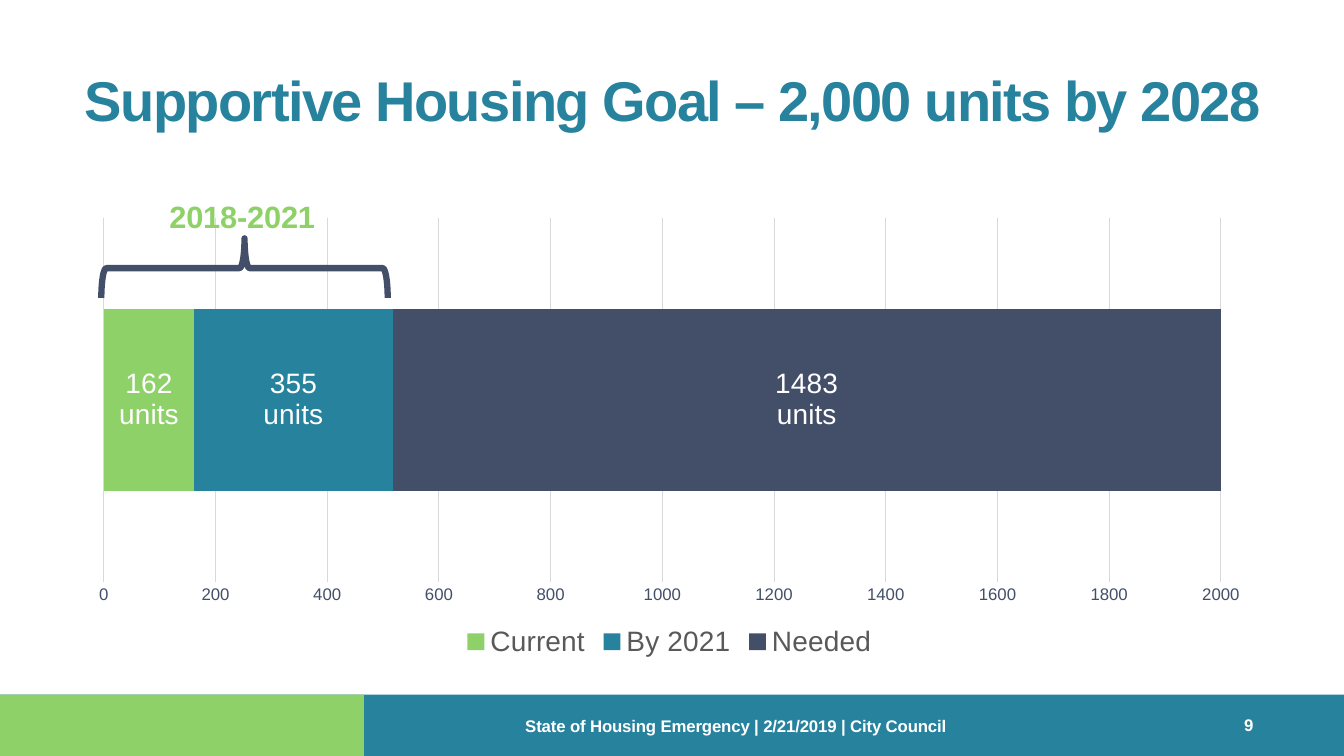
import dataclasses

import lxml.etree
import pptx
import pptx.chart.data
import pptx.dml.color
import pptx.enum.chart
import pptx.enum.shapes
import pptx.enum.text
import pptx.oxml.ns
import pptx.util

PX = 9144  # one hundredth of an inch
FONT = "Arial"
COLORS = {
    "green": "8FD169",
    "teal": "27829D",
    "navy": "434F69",
    "white": "FFFFFF",
    "gray": "595959",
    "grid": "D9D9D9",
}


@dataclasses.dataclass(frozen=True)
class Area:
    left: int
    top: int
    width: int
    height: int

    def emu(self) -> list[int]:
        return [side * PX for side in dataclasses.astuple(self)]


@dataclasses.dataclass(frozen=True)
class Band:
    area: Area
    color: str


@dataclasses.dataclass(frozen=True)
class Caption:
    area: Area
    text: str
    size: int
    color: str
    tracking: int = 0  # hundredths of a point
    indent: int = 1
    space_before: float = 0
    line_height: float | None = None
    centered: bool = False


@dataclasses.dataclass(frozen=True)
class Stage:
    name: str
    units: int
    color: str


STAGES = [
    Stage("Current", 162, "green"),
    Stage("By 2021", 355, "teal"),
    Stage("Needed", 1483, "navy"),
]
BANDS = [
    Band(Area(0, 689, 1333, 61), "teal"),
    Band(Area(0, 689, 361, 61), "green"),
]
TITLE = Caption(Area(75, 64, 1183, 69), "Supportive Housing Goal – 2,000 units by 2028",
                40, "teal", tracking=-110, space_before=1, centered=True)
CAPTIONS = [
    Caption(Area(167, 195, 150, 38), "2018-2021", 22, "green", tracking=-10, space_before=1),
    Caption(Area(1231, 708, 23, 21), "9", 12, "white", indent=3, space_before=0.4),
    Caption(Area(520, 710, 667, 20), "State of Housing Emergency | 2/21/2019 | City Council",
            12, "white", tracking=-10, line_height=14.2),
]
CHART_AREA = Area(75, 207, 1178, 451)
PLOT_AREA = Area(103, 216, 1108, 361)
BRACE_AREA = Area(213, 124, 59, 284)


def rgb(color: str) -> pptx.dml.color.RGBColor:
    return pptx.dml.color.RGBColor.from_string(COLORS[color])


def style_font(font, size: float, color: str, bold: bool = False) -> None:
    font.name = FONT
    font.size = pptx.util.Pt(size)
    font.bold = bold
    font.color.rgb = rgb(color)


def write_caption(box, caption: Caption) -> None:
    box.left, box.top, box.width, box.height = caption.area.emu()
    frame = box.text_frame
    frame.word_wrap = True
    frame.auto_size = pptx.enum.text.MSO_AUTO_SIZE.NONE
    frame.vertical_anchor = pptx.enum.text.MSO_ANCHOR.TOP
    frame.margin_left = caption.indent * PX
    frame.margin_right = frame.margin_bottom = 0
    frame.margin_top = 0 if caption.line_height else PX
    para = frame.paragraphs[0]
    align = pptx.enum.text.PP_ALIGN
    para.alignment = align.CENTER if caption.centered else align.LEFT
    para.space_before = pptx.util.Pt(caption.space_before)
    if caption.line_height:
        para.line_spacing = pptx.util.Pt(caption.line_height)
    span = para.add_run()
    span.text = caption.text
    style_font(span.font, caption.size, caption.color, bold=True)
    if caption.tracking:
        span._r.get_or_add_rPr().set("spc", str(caption.tracking))


def add_band(page, band: Band) -> None:
    shape = page.shapes.add_shape(pptx.enum.shapes.MSO_SHAPE.RECTANGLE, *band.area.emu())
    shape.shadow.inherit = False
    shape.fill.solid()
    shape.fill.fore_color.rgb = rgb(band.color)
    shape.line.fill.background()


def add_brace(page) -> None:
    brace = page.shapes.add_shape(pptx.enum.shapes.MSO_SHAPE.LEFT_BRACE, *BRACE_AREA.emu())
    brace.rotation = 90
    brace.shadow.inherit = False
    brace.fill.background()
    brace.line.color.rgb = rgb("navy")
    brace.line.width = pptx.util.Pt(4.5)


def place_plot(chart) -> None:
    """Fix the inner plot area as fractions of the chart frame."""
    qn = pptx.oxml.ns.qn
    plot_area = chart._chartSpace.find(".//" + qn("c:plotArea"))
    for old in plot_area.findall(qn("c:layout")):
        plot_area.remove(old)
    layout = lxml.etree.Element(qn("c:layout"))
    manual = lxml.etree.SubElement(layout, qn("c:manualLayout"))
    settings = {
        "layoutTarget": "inner",
        "xMode": "edge",
        "yMode": "edge",
        "x": (PLOT_AREA.left - CHART_AREA.left) / CHART_AREA.width,
        "y": (PLOT_AREA.top - CHART_AREA.top) / CHART_AREA.height,
        "w": PLOT_AREA.width / CHART_AREA.width,
        "h": PLOT_AREA.height / CHART_AREA.height,
    }
    for name, value in settings.items():
        lxml.etree.SubElement(manual, qn("c:" + name)).set("val", str(value))
    plot_area.insert(0, layout)


def style_series(series, stage: Stage) -> None:
    series.format.fill.solid()
    series.format.fill.fore_color.rgb = rgb(stage.color)
    series.data_labels.show_value = True
    style_font(series.data_labels.font, 20, "white")
    frame = series.points[0].data_label.text_frame
    for index, text in enumerate([str(stage.units), "units"]):
        para = frame.add_paragraph() if index else frame.paragraphs[0]
        span = para.add_run()
        span.text = text
        style_font(span.font, 20, "white")


def add_units_chart(page) -> None:
    kinds = pptx.enum.chart
    data = pptx.chart.data.CategoryChartData()
    data.categories = ["1"]
    for stage in STAGES:
        data.add_series(stage.name, [stage.units])
    chart = page.shapes.add_chart(
        kinds.XL_CHART_TYPE.BAR_STACKED, *CHART_AREA.emu(), data).chart
    style_font(chart.font, 10, "navy")
    chart.has_title = False
    chart.has_legend = True
    chart.legend.position = kinds.XL_LEGEND_POSITION.BOTTOM
    chart.legend.include_in_layout = False
    style_font(chart.legend.font, 20, "gray")
    chart.category_axis.visible = False

    axis = chart.value_axis
    axis.minimum_scale, axis.maximum_scale, axis.major_unit = 0, 2000, 200
    axis.major_tick_mark = kinds.XL_TICK_MARK.NONE
    axis.format.line.fill.background()
    style_font(axis.tick_labels.font, 12, "navy")
    axis.has_major_gridlines = True
    axis.major_gridlines.format.line.color.rgb = rgb("grid")
    axis.major_gridlines.format.line.width = pptx.util.Pt(0.75)

    plot = chart.plots[0]
    plot.gap_width = plot.overlap = 100
    plot.vary_by_categories = False
    for series, stage in zip(plot.series, STAGES):
        style_series(series, stage)
    place_plot(chart)


def main() -> None:
    deck = pptx.Presentation()
    deck.slide_width, deck.slide_height = 1333 * PX, 750 * PX
    page = deck.slides.add_slide(deck.slide_layouts.get_by_name("Title Only"))
    write_caption(page.shapes.title, TITLE)
    add_units_chart(page)
    for band in BANDS:
        add_band(page, band)
    for caption in CAPTIONS:
        write_caption(page.shapes.add_textbox(*caption.area.emu()), caption)
    add_brace(page)
    deck.save("out.pptx")


if __name__ == "__main__":
    main()
